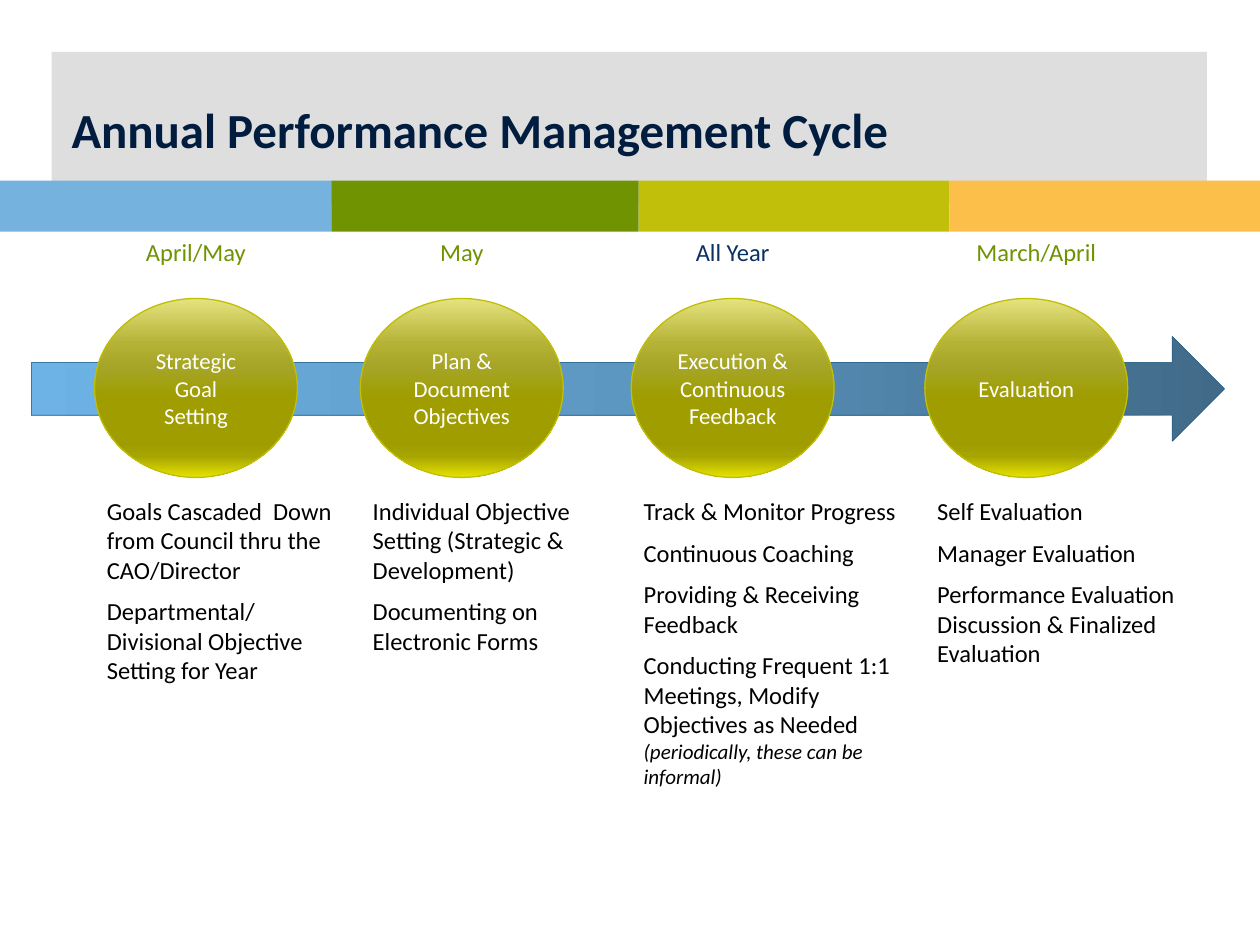
import pptx
import pptx.util
import pptx.dml.color
import pptx.enum.shapes
import pptx.enum.text
import pptx.oxml
import pptx.oxml.ns
from itertools import pairwise

RGB = pptx.dml.color.RGBColor
SHAPE = pptx.enum.shapes.MSO_SHAPE
ANCHOR = pptx.enum.text.MSO_ANCHOR
ALIGN = pptx.enum.text.PP_ALIGN
Pt = pptx.util.Pt

W, H = pptx.util.Inches(10), pptx.util.Inches(7.5)
FONT = "Calibri"
WHITE = RGB(0xFF, 0xFF, 0xFF)
BLACK = RGB(0x00, 0x00, 0x00)
GREY = RGB(0xDE, 0xDE, 0xDE)
TITLE_NAVY = RGB(0x00, 0x1C, 0x3F)
LABEL_NAVY = RGB(0x09, 0x31, 0x62)
GREEN = RGB(0x70, 0x93, 0x02)
LIME = RGB(0xC1, 0xBF, 0x0A)
OVAL_LINE = RGB(0xC1, 0xBF, 0x05)
ARROW_LINE = RGB(0x21, 0x5D, 0x88)
BAND_COLORS = [RGB(0x75, 0xB2, 0xDD), GREEN, LIME, RGB(0xFC, 0xBF, 0x49)]
BAND_EDGES = [0, 26.3, 50.7, 75.35, 100]

ARROW_STOPS = [(0, RGB(0x41, 0x6A, 0x88)), (50, RGB(0x5C, 0x97, 0xC1)),
               (100, RGB(0x6D, 0xB3, 0xE5))]
OVAL_STOPS = [(0, RGB(0xE5, 0xE3, 0x7F)), (25, RGB(0xB5, 0xB3, 0x36)),
              (38, RGB(0xA6, 0xA5, 0x28)), (55, RGB(0x9F, 0x9D, 0x00)),
              (80, RGB(0x9E, 0x9C, 0x00)), (88, RGB(0xA6, 0xA4, 0x00)),
              (100, RGB(0xE5, 0xE2, 0x00))]

STAGES = [
    (7.5, 21.3, 0, "April/May", GREEN, ["Strategic Goal", "Setting"],
     ["Goals Cascaded  Down from Council thru the CAO/Director",
      "Departmental/ Divisional Objective Setting for Year"], ""),
    (28.6, 21.7, 0, "May", GREEN, ["Plan & Document Objectives"],
     ["Individual Objective Setting (Strategic & Development)",
      "Documenting on Electronic Forms"], ""),
    (50.1, 23.5, 0, "All Year", LABEL_NAVY, ["Execution & Continuous Feedback"],
     ["Track & Monitor Progress", "Continuous Coaching",
      "Providing & Receiving Feedback",
      "Conducting Frequent 1:1 Meetings, Modify Objectives as Needed "],
     "(periodically, these can be informal)"),
    (73.4, 21.6, 0.8, "March/April", GREEN, ["Evaluation"],
     ["Self Evaluation", "Manager Evaluation",
      "Performance Evaluation Discussion & Finalized Evaluation"], ""),
]


def place(x, y, w, h):
    return [int(W * x / 100), int(H * y / 100), int(W * w / 100), int(H * h / 100)]


def add_shape(s, kind, box, color=None, line=None, width=0):
    sp = s.shapes.add_shape(kind, *place(*box))
    sp.shadow.inherit = False
    if color is not None:
        sp.fill.solid()
        sp.fill.fore_color.rgb = color
    if line is None:
        sp.line.fill.background()
    else:
        sp.line.color.rgb = line
        sp.line.width = Pt(width)
    return sp


def set_gradient(sp, stops, angle):
    sp.fill.gradient()
    grad = sp.element.spPr.find(pptx.oxml.ns.qn("a:gradFill"))
    marks = "".join(f'<a:gs pos="{pos * 1000}"><a:srgbClr val="{color}"/></a:gs>'
                    for pos, color in stops)
    new = pptx.oxml.parse_xml(
        f'<a:gradFill {pptx.oxml.ns.nsdecls("a")} rotWithShape="1">'
        f'<a:gsLst>{marks}</a:gsLst><a:lin ang="{angle * 60000}" scaled="0"/></a:gradFill>')
    grad.getparent().replace(grad, new)


def write(sp, lines, size, color, align=ALIGN.LEFT, anchor=ANCHOR.TOP, gap=0, bold=False):
    tf = sp.text_frame
    tf.word_wrap = True
    tf.vertical_anchor = anchor
    for i, line in enumerate(lines):
        p = tf.add_paragraph() if i else tf.paragraphs[0]
        p.alignment = align
        if i and gap:
            p.space_before = Pt(gap)
        p.font.name = FONT
        p.font.size = Pt(size)
        p.font.bold = bold
        p.font.color.rgb = color
        p.add_run().text = line
    return tf


def add_text(s, box, *args, **kwargs):
    return write(s.shapes.add_textbox(*place(*box)), *args, **kwargs)


def draw_header(s, x, y, w, h):
    add_shape(s, SHAPE.RECTANGLE, (x, y, w, h), GREY)
    add_text(s, (x + 0.6, y + 0.5, w, h - 1), ["Annual Performance Management Cycle"],
             28, TITLE_NAVY, anchor=ANCHOR.MIDDLE, bold=True)


def draw_bands(s, x, y, w, h):
    for (start, end), color in zip(pairwise(BAND_EDGES), BAND_COLORS):
        add_shape(s, SHAPE.RECTANGLE,
                  (x + w * start / 100, y, w * (end - start) / 100, h), color)


def draw_arrow(s, x, y, w, h):
    sp = add_shape(s, SHAPE.RIGHT_ARROW, (x, y, w, h), line=ARROW_LINE, width=0.25)
    set_gradient(sp, ARROW_STOPS, 180)


def draw_stage(s, x, y, w, h, label_shift, month, month_color, name, notes, aside):
    oval_w = 16.1
    add_text(s, (x + label_shift, y, oval_w, h * 0.07), [month], 14, month_color, ALIGN.CENTER)
    sp = add_shape(s, SHAPE.OVAL, (x, y + h * 0.11, oval_w, h * 0.29),
                   line=OVAL_LINE, width=0.75)
    set_gradient(sp, OVAL_STOPS, 90)
    write(sp, name, 13, WHITE, ALIGN.CENTER, ANCHOR.MIDDLE)
    tf = add_text(s, (x, y + h * 0.42, w, h * 0.58), notes, 14, BLACK, gap=7)
    if aside:
        r = tf.paragraphs[-1].add_run()
        r.text = aside
        r.font.size = Pt(12)
        r.font.italic = True


def main():
    prs = pptx.Presentation()
    prs.slide_width, prs.slide_height = W, H
    s = prs.slides.add_slide(prs.slide_layouts[6])
    draw_header(s, 4.1, 5.5, 91.7, 16.2)
    draw_bands(s, 0, 19.1, 100, 5.4)
    draw_arrow(s, 2.5, 35.6, 94.7, 11.1)
    for x, w, *content in STAGES:
        draw_stage(s, x, 24.4, w, 65.3, *content)
    prs.save("out.pptx")


if __name__ == "__main__":
    main()
